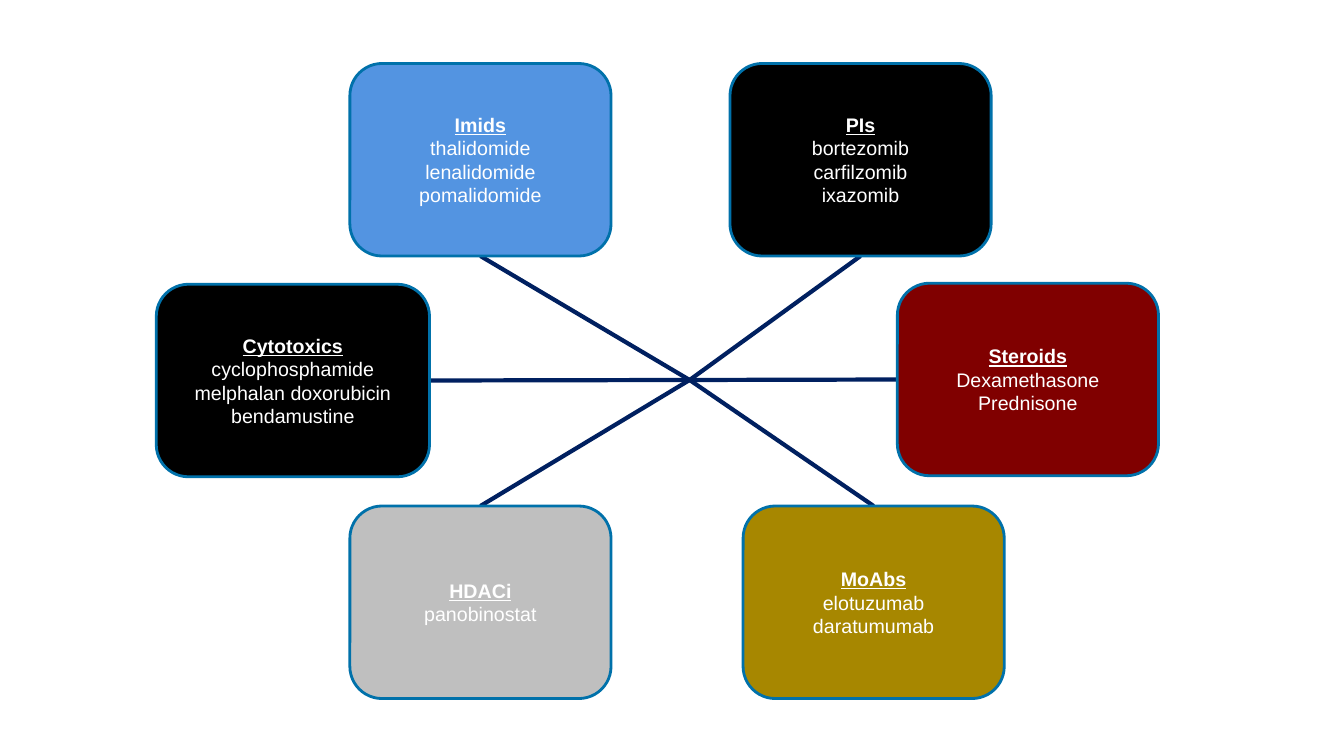
from lxml import etree
from pptx import Presentation
from pptx.dml.color import RGBColor
from pptx.enum.shapes import MSO_CONNECTOR, MSO_SHAPE
from pptx.enum.text import MSO_ANCHOR, PP_ALIGN
from pptx.oxml.ns import qn
from pptx.util import Pt

STRAIGHT = MSO_CONNECTOR.STRAIGHT
ROUNDED = MSO_SHAPE.ROUNDED_RECTANGLE
MIDDLE = MSO_ANCHOR.MIDDLE
CENTER = PP_ALIGN.CENTER

# Connection sites of a rounded rectangle
TOP, LEFT, BOTTOM, RIGHT = range(4)

# Content: heading, drugs, left, top, width, fill, side facing the hub
DRUG_CLASSES = [
    ("Steroids", ["Dexamethasone", "Prednisone"], 890, 281, 259, "800000", LEFT),
    ("HDACi", ["panobinostat"], 347, 502, 259, "BFBFBF", TOP),
    ("MoAbs", ["elotuzumab", "daratumumab"], 737, 502, 259, "A78700", TOP),
    ("Cytotoxics", ["cyclophosphamide", "melphalan doxorubicin", "bendamustine"],
     155, 282, 271, "000000", RIGHT),
    ("PIs", ["bortezomib", "carfilzomib", "ixazomib"], 724, 63, 259, "000000", BOTTOM),
    ("Imids", ["thalidomide", "lenalidomide", "pomalidomide"],
     347, 63, 259, "5394E1", BOTTOM),
]
SLIDE_SIZE = (1333, 750)
HUB = (684, 377)
BOX_HEIGHT = 191
SPOKE_COLOR, OUTLINE_COLOR, TEXT_COLOR = "002060", "0071AA", "FFFFFF"


def px(length):
    return length * 9144


def color(value):
    return RGBColor.from_string(value)


def add_spoke(slide):
    x, y = map(px, HUB)
    spoke = slide.shapes.add_connector(STRAIGHT, x, y, x, y)
    spoke.line.color.rgb = color(SPOKE_COLOR)
    spoke.line.width = Pt(3)
    etree.SubElement(spoke._element.spPr, qn("a:effectLst"))
    return spoke


def add_box(slide, heading, drugs, left, top, width, fill):
    box = slide.shapes.add_shape(ROUNDED, px(left), px(top), px(width), px(BOX_HEIGHT))
    box.shadow.inherit = False
    box.fill.solid()
    box.fill.fore_color.rgb = color(fill)
    box.line.color.rgb = color(OUTLINE_COLOR)
    box.line.width = Pt(2)

    frame = box.text_frame
    frame.word_wrap = True
    frame.vertical_anchor = MIDDLE
    for index, text in enumerate([heading] + drugs):
        paragraph = frame.add_paragraph() if index else frame.paragraphs[0]
        paragraph.alignment = CENTER
        run = paragraph.add_run()
        run.text = text
        run.font.name = "Arial"
        run.font.size = Pt(14)
        run.font.color.rgb = color(TEXT_COLOR)
        run.font.bold = run.font.underline = index == 0
    return box


def main():
    presentation = Presentation()
    presentation.slide_width, presentation.slide_height = map(px, SLIDE_SIZE)
    slide = presentation.slides.add_slide(presentation.slide_layouts[6])

    # Each spoke lies behind its box and runs from the box to the hub
    for *box_content, side in DRUG_CLASSES:
        spoke = add_spoke(slide)
        box = add_box(slide, *box_content)
        spoke.begin_connect(box, side)

    presentation.save("out.pptx")


if __name__ == "__main__":
    main()
